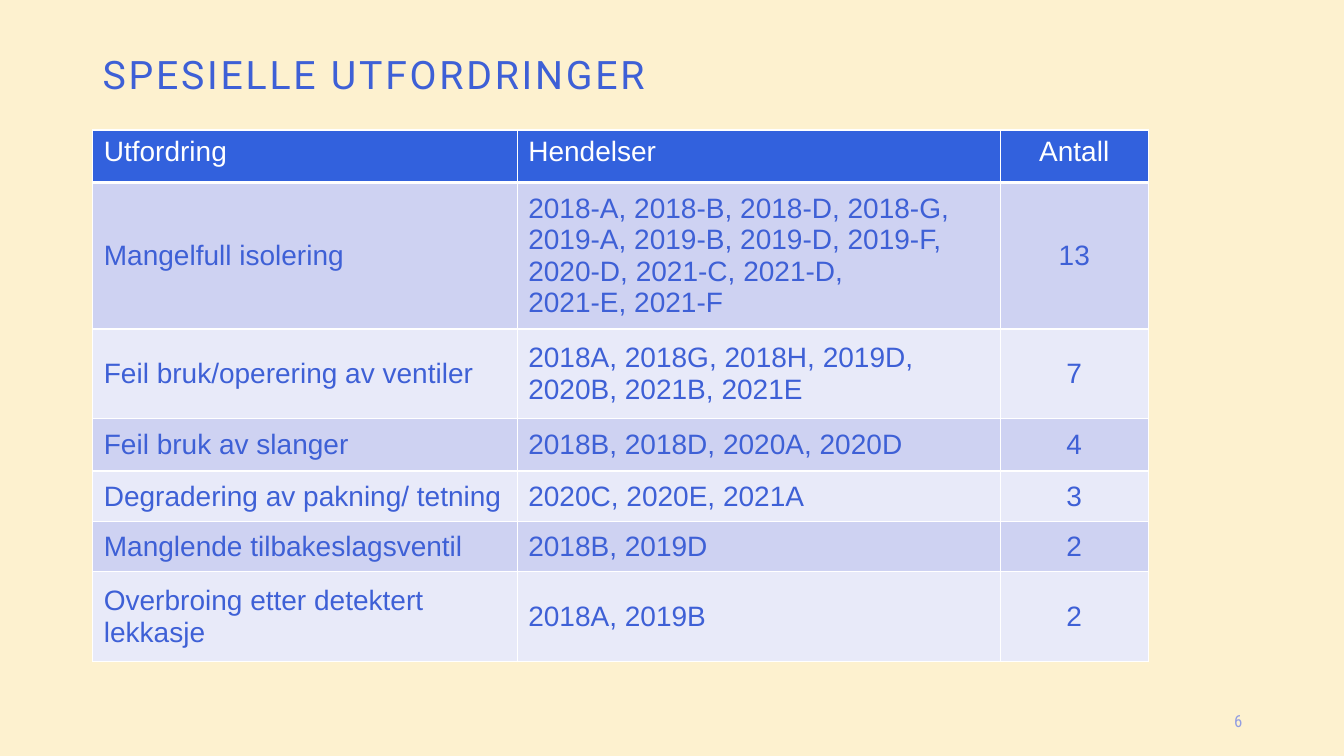
from lxml.etree import SubElement
from pptx import Presentation
from pptx.dml.color import RGBColor
from pptx.enum.text import MSO_ANCHOR as Anchor, PP_ALIGN as Align
from pptx.oxml.ns import qn
from pptx.util import Inches, Pt

COLORS = {
    "page": "FDF1CF", "text": "3E60D6", "number": "929DE1", "header": "3261DD",
    "white": "FFFFFF", "dark band": "CED2F2", "light band": "E8EAF9",
}
TITLE_BOX = (0.92, 0.4, 11.5, 0.72)
TABLE_BOX = (0.92, 1.29, 10.47, 5.17)
NUMBER_BOX = (9.42, 6.95, 3, 0.4)

COLUMN_WIDTHS = (4.21, 4.79, 1.47)
COLUMN_ALIGNS = (Align.LEFT, Align.LEFT, Align.CENTER)
ROW_HEIGHTS = (0.52, 1.35, 0.89, 0.52, 0.5, 0.5, 0.89)
CELL_MARGINS = {"margin_left": 0.11, "margin_right": 0.11,
                "margin_top": 0.06, "margin_bottom": 0.06}
ROWS = (
    ("Utfordring", "Hendelser", "Antall"),
    ("Mangelfull isolering",
     "2018-A, 2018-B, 2018-D, 2018-G,\n"
     "2019-A, 2019-B, 2019-D, 2019-F, 2020-D, 2021-C, 2021-D,\n"
     "2021-E, 2021-F", "13"),
    ("Feil bruk/operering av ventiler",
     "2018A, 2018G, 2018H, 2019D, 2020B, 2021B, 2021E", "7"),
    ("Feil bruk av slanger", "2018B, 2018D, 2020A, 2020D", "4"),
    ("Degradering av pakning/ tetning", "2020C, 2020E, 2021A", "3"),
    ("Manglende tilbakeslagsventil", "2018B, 2019D", "2"),
    ("Overbroing etter detektert lekkasje", "2018A, 2019B", "2"),
)


def color(name):
    return RGBColor.from_string(COLORS[name])


def write(frame, text, font, size, color_name, **para_format):
    """Fill a text frame, one paragraph for each line of text."""
    frame.text = text
    for para in frame.paragraphs:
        for name, value in para_format.items():
            setattr(para, name, value)
        for span in para.runs:
            span.font.name = font
            span.font.size = Pt(size)
            span.font.color.rgb = color(color_name)


def add_text(page, box, *text_format, **para_format):
    frame = page.shapes.add_textbox(*map(Inches, box)).text_frame
    frame.word_wrap = True
    frame.vertical_anchor = Anchor.MIDDLE
    write(frame, *text_format, **para_format)
    return frame


def add_title(page, box):
    frame = add_text(page, box, "SPESIELLE UTFORDRINGER", "Roboto", 28, "text",
                     line_spacing=0.9)
    # Letter spacing, in hundredths of a point
    frame.paragraphs[0].runs[0]._r.get_or_add_rPr().set("spc", "200")


def add_borders(cell, bottom_width):
    properties = cell._tc.get_or_add_tcPr()
    widths = {"a:lnL": 1, "a:lnR": 1, "a:lnT": 1, "a:lnB": bottom_width}
    for tag, width in widths.items():
        line = SubElement(properties, qn(tag), w=str(Pt(width)))
        fill = SubElement(line, qn("a:solidFill"))
        SubElement(fill, qn("a:srgbClr"), val=COLORS["white"])


def format_cell(cell, text, row, align):
    is_header = row == 0
    band = "dark band" if row % 2 else "light band"
    for name, value in CELL_MARGINS.items():
        setattr(cell, name, Inches(value))
    cell.vertical_anchor = Anchor.TOP if is_header else Anchor.MIDDLE
    add_borders(cell, 3 if is_header else 1)
    cell.fill.solid()
    cell.fill.fore_color.rgb = color("header" if is_header else band)
    write(cell.text_frame, text, "Arial", 20,
          "white" if is_header else "text", alignment=align)


def add_challenge_table(page, box):
    shape = page.shapes.add_table(len(ROWS), len(COLUMN_WIDTHS), *map(Inches, box))
    table = shape.table
    for column, width in zip(table.columns, COLUMN_WIDTHS):
        column.width = Inches(width)
    for row, (texts, height) in enumerate(zip(ROWS, ROW_HEIGHTS)):
        table.rows[row].height = Inches(height)
        for column, (text, align) in enumerate(zip(texts, COLUMN_ALIGNS)):
            format_cell(table.cell(row, column), text, row, align)


def main():
    deck = Presentation()
    deck.slide_width, deck.slide_height = Inches(13.33), Inches(7.5)
    page = deck.slides.add_slide(deck.slide_layouts[6])
    page.background.fill.solid()
    page.background.fill.fore_color.rgb = color("page")
    add_title(page, TITLE_BOX)
    add_challenge_table(page, TABLE_BOX)
    add_text(page, NUMBER_BOX, "6", "Roboto Condensed", 12, "number",
             alignment=Align.RIGHT)
    deck.save("out.pptx")


if __name__ == "__main__":
    main()
